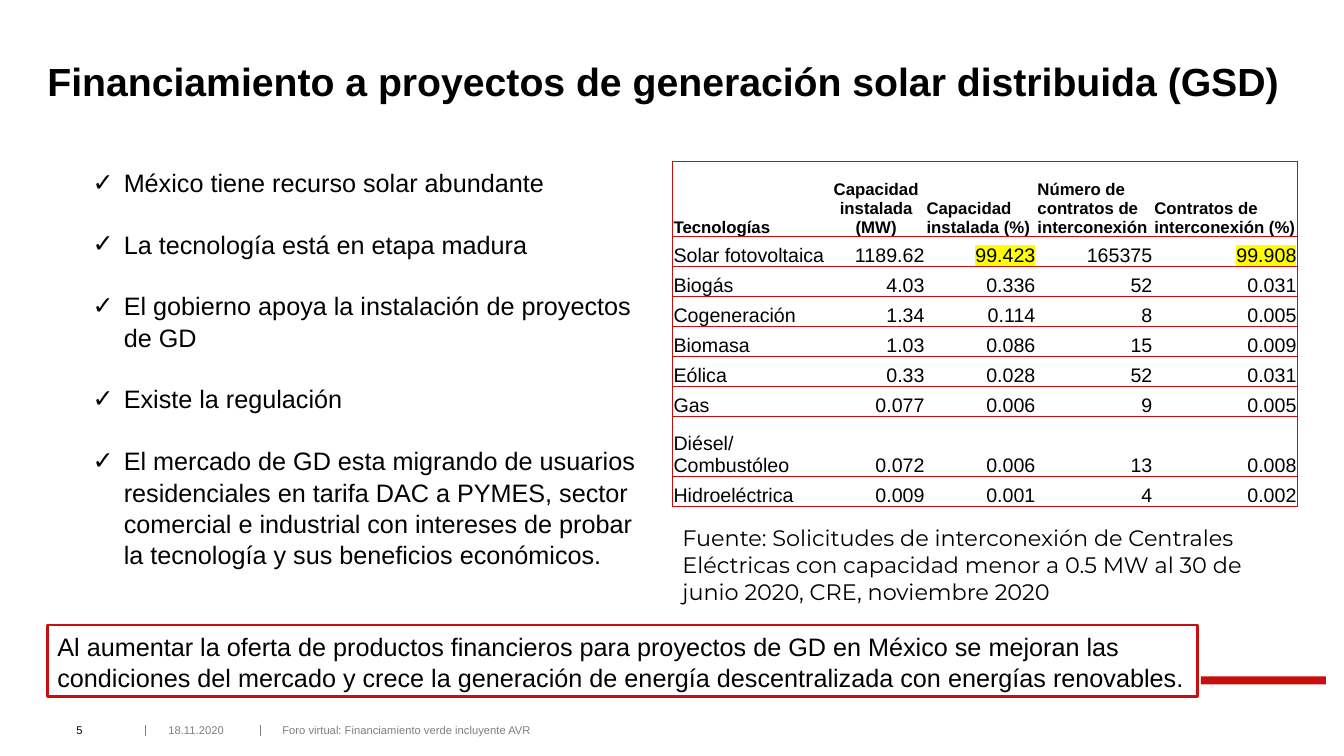
from dataclasses import dataclass

import lxml.etree
import pptx
import pptx.dml.color
import pptx.enum.shapes
import pptx.enum.text
import pptx.oxml
import pptx.oxml.ns
import pptx.util

ALIGN = pptx.enum.text.PP_ALIGN
ANCHOR = pptx.enum.text.MSO_ANCHOR
AUTO_SIZE = pptx.enum.text.MSO_AUTO_SIZE
RECTANGLE = pptx.enum.shapes.MSO_SHAPE.RECTANGLE
qn = pptx.oxml.ns.qn

COLORS = {"ink": "000000", "red": "C80F0F", "gray": "7F7F7F",
          "paper": "FFFFFF", "marker": "FFFF00"}
WIDTH, HEIGHT = pptx.util.Inches(13.33), pptx.util.Inches(7.5)
COLUMNS = ROWS = 100
LEFT_EDGE, TABLE_LEFT, BODY_TOP = 3.53, 50.04, 21.33
FOOTER_TOP, FOOTER_HEIGHT = 95.73, 1.73
DEFAULT_INSETS = (7.2, 3.6, 7.2, 3.6)
NO_INSETS = (0, 0, 0, 0)
BULLET_INDENT = 0.31
BODY_SPACING = 1.04

BENEFITS = [
    "México tiene recurso solar abundante",
    "La tecnología está en etapa madura",
    "El gobierno apoya la instalación de proyectos de GD",
    "Existe la regulación",
    "El mercado de GD esta migrando de usuarios residenciales en tarifa DAC a PYMES, "
    "sector comercial e industrial con intereses de probar la tecnología y sus "
    "beneficios económicos.",
]
TECHNOLOGIES = [
    ("Tecnologías", "Capacidad instalada (MW)", "Capacidad instalada (%)",
     "Número de contratos de interconexión", "Contratos de interconexión (%)"),
    ("Solar fotovoltaica", "1189.62", "99.423", "165375", "99.908"),
    ("Biogás", "4.03", "0.336", "52", "0.031"),
    ("Cogeneración", "1.34", "0.114", "8", "0.005"),
    ("Biomasa", "1.03", "0.086", "15", "0.009"),
    ("Eólica", "0.33", "0.028", "52", "0.031"),
    ("Gas", "0.077", "0.006", "9", "0.005"),
    ("Diésel/\nCombustóleo", "0.072", "0.006", "13", "0.008"),
    ("Hidroeléctrica", "0.009", "0.001", "4", "0.002"),
]
TABLE_COLUMNS = [11.48, 7.35, 8.25, 8.7, 10.73]
TABLE_ROWS = [10] + [3.97] * 6 + [7.87, 3.97]
HIGHLIGHTED = {(1, 2), (1, 4)}


@dataclass
class Area:
    """A block of the slide grid, in columns and rows."""
    left: float
    top: float
    width: float
    height: float

    def box(self) -> tuple:
        return (across(self.left), down(self.top), across(self.width), down(self.height))


@dataclass
class FooterItem:
    text: str
    left: float
    width: float
    color: str
    insets: tuple


FOOTER = [
    FooterItem("5", 4.95, 6.08, "ink", DEFAULT_INSETS),
    FooterItem("18.11.2020", 12.53, 5.85, "gray", NO_INSETS),
    FooterItem("Foro virtual: Financiamiento verde incluyente AVR", 21.01, 62.42,
               "gray", NO_INSETS),
]
FOOTER_DIVIDERS = [10.8, 19.35]


def across(columns: float) -> int:
    return round(WIDTH * columns / COLUMNS)


def down(rows: float) -> int:
    return round(HEIGHT * rows / ROWS)


def rgb(color: str) -> pptx.dml.color.RGBColor:
    return pptx.dml.color.RGBColor.from_string(COLORS[color])


def add_check_mark(paragraph) -> None:
    indent = pptx.util.Inches(BULLET_INDENT)
    properties = paragraph._p.get_or_add_pPr()
    properties.set("marL", str(indent))
    properties.set("indent", str(-indent))
    lxml.etree.SubElement(properties, qn("a:buFont"), typeface="Arial")
    lxml.etree.SubElement(properties, qn("a:buChar"), char="✓")


def highlight(run) -> None:
    mark = pptx.oxml.parse_xml(
        f'<a:highlight {pptx.oxml.ns.nsdecls("a")}>'
        f'<a:srgbClr val="{COLORS["marker"]}"/></a:highlight>')
    run._r.rPr.find(qn("a:solidFill")).addnext(mark)


def write(frame, text: str, *, size: float, font: str = "Arial", color: str = "ink",
          bold: bool = False, align=ALIGN.LEFT, spacing: float = 1, gap: float = 0,
          checked: bool = False, marked: bool = False) -> None:
    """Fill a text frame, one paragraph for each line of text."""
    for index, line in enumerate(text.split("\n")):
        paragraph = frame.add_paragraph() if index else frame.paragraphs[0]
        paragraph.alignment = align
        paragraph.line_spacing = spacing
        if index:
            paragraph.space_before = pptx.util.Pt(gap)
        if checked:
            add_check_mark(paragraph)
        run = paragraph.add_run()
        run.text = line
        run.font.name, run.font.size, run.font.bold = font, pptx.util.Pt(size), bold
        run.font.color.rgb = rgb(color)
        if marked:
            highlight(run)


def prepare(frame, anchor=ANCHOR.TOP, insets: tuple = DEFAULT_INSETS, grow: bool = False):
    """Set the layout of a text frame; insets run left, top, right, bottom in points."""
    frame.word_wrap = True
    frame.auto_size = AUTO_SIZE.SHAPE_TO_FIT_TEXT if grow else AUTO_SIZE.NONE
    frame.vertical_anchor = anchor
    (frame.margin_left, frame.margin_top,
     frame.margin_right, frame.margin_bottom) = map(pptx.util.Pt, insets)
    return frame


def add_text(slide, area: Area, text: str, *, anchor=ANCHOR.TOP,
             insets: tuple = DEFAULT_INSETS, grow: bool = False, **text_format) -> None:
    frame = slide.shapes.add_textbox(*area.box()).text_frame
    write(prepare(frame, anchor, insets, grow), text, **text_format)


def add_rectangle(slide, area: Area, fill: str):
    rectangle = slide.shapes.add_shape(RECTANGLE, *area.box())
    rectangle.shadow.inherit = False
    rectangle.fill.solid()
    rectangle.fill.fore_color.rgb = rgb(fill)
    rectangle.line.fill.background()
    return rectangle


def add_divider(slide, column: float) -> None:
    divider = slide.shapes.add_connector(
        pptx.enum.shapes.MSO_CONNECTOR.STRAIGHT,
        across(column), down(95.87), across(column), down(97.33))
    divider.line.color.rgb = rgb("gray")
    divider.line.width = pptx.util.Pt(0.75)
    lxml.etree.SubElement(divider._element.spPr, qn("a:effectLst"))


def add_borders(cell, column: int) -> None:
    """Rule the cell above and below, and at the sides only on the table's edge."""
    drawn = {"lnL": column == 0, "lnR": column == len(TABLE_COLUMNS) - 1,
             "lnT": True, "lnB": True}
    properties = cell._tc.get_or_add_tcPr()
    for position, (side, visible) in enumerate(drawn.items()):
        paint = (f'<a:solidFill><a:srgbClr val="{COLORS["red"]}"/></a:solidFill>'
                 if visible else "<a:noFill/>")
        properties.insert(position, pptx.oxml.parse_xml(
            f'<a:{side} {pptx.oxml.ns.nsdecls("a")} w="{pptx.util.Pt(1)}">{paint}</a:{side}>'))


def add_technologies(slide) -> None:
    area = Area(TABLE_LEFT, BODY_TOP, sum(TABLE_COLUMNS), sum(TABLE_ROWS))
    table = slide.shapes.add_table(len(TABLE_ROWS), len(TABLE_COLUMNS), *area.box()).table
    table.first_row = table.horz_banding = False
    for column, width in zip(table.columns, TABLE_COLUMNS):
        column.width = across(width)
    for r, (height, values) in enumerate(zip(TABLE_ROWS, TECHNOLOGIES)):
        table.rows[r].height = down(height)
        header = r == 0
        for c, value in enumerate(values):
            cell = table.cell(r, c)
            cell.vertical_anchor = ANCHOR.BOTTOM
            cell.margin_left = cell.margin_top = cell.margin_right = pptx.util.Pt(0.72)
            cell.margin_bottom = 0
            cell.fill.solid()
            cell.fill.fore_color.rgb = rgb("paper")
            add_borders(cell, c)
            align = ALIGN.CENTER if header and c == 1 else ALIGN.LEFT
            if c and not header:
                align = ALIGN.RIGHT
            write(cell.text_frame, value, size=12 if header else 14, bold=header,
                  align=align, marked=(r, c) in HIGHLIGHTED)


def main() -> None:
    deck = pptx.Presentation()
    deck.slide_width, deck.slide_height = WIDTH, HEIGHT
    slide = deck.slides.add_slide(deck.slide_layouts[6])

    add_rectangle(slide, Area(89.35, 89.47, 9.3, 1.07), "red")
    for column in FOOTER_DIVIDERS:
        add_divider(slide, column)
    add_text(slide, Area(LEFT_EDGE, 6.8, 93.02, 7.07),
             "Financiamiento a proyectos de generación solar distribuida (GSD)",
             size=28, bold=True, spacing=0.9, anchor=ANCHOR.BOTTOM, insets=(0, 0, 5.76, 0))
    for item in FOOTER:
        add_text(slide, Area(item.left, FOOTER_TOP, item.width, FOOTER_HEIGHT), item.text,
                 size=8, color=item.color, anchor=ANCHOR.MIDDLE, insets=item.insets)
    add_text(slide, Area(6.15, BODY_TOP, 42.76, 53.87), "\n".join(BENEFITS),
             size=18, spacing=BODY_SPACING, gap=21.6, checked=True, grow=True)

    conclusion = add_rectangle(slide, Area(LEFT_EDGE, 82.67, 85.6, 9.47), "paper")
    conclusion.line.color.rgb = rgb("red")
    conclusion.line.width = pptx.util.Pt(2)
    write(prepare(conclusion.text_frame, grow=True),
          "Al aumentar la oferta de productos financieros para proyectos de GD en México "
          "se mejoran las condiciones del mercado y crece la generación de energía "
          "descentralizada con energías renovables.", size=18, spacing=BODY_SPACING)

    add_technologies(slide)
    add_text(slide, Area(TABLE_LEFT, 68.67, 47.64, 12.13),
             "Fuente: Solicitudes de interconexión de Centrales Eléctricas con capacidad "
             "menor a 0.5 MW al 30 de junio 2020, CRE, noviembre 2020",
             size=16, font="Montserrat", grow=True)
    deck.save("out.pptx")


if __name__ == "__main__":
    main()
